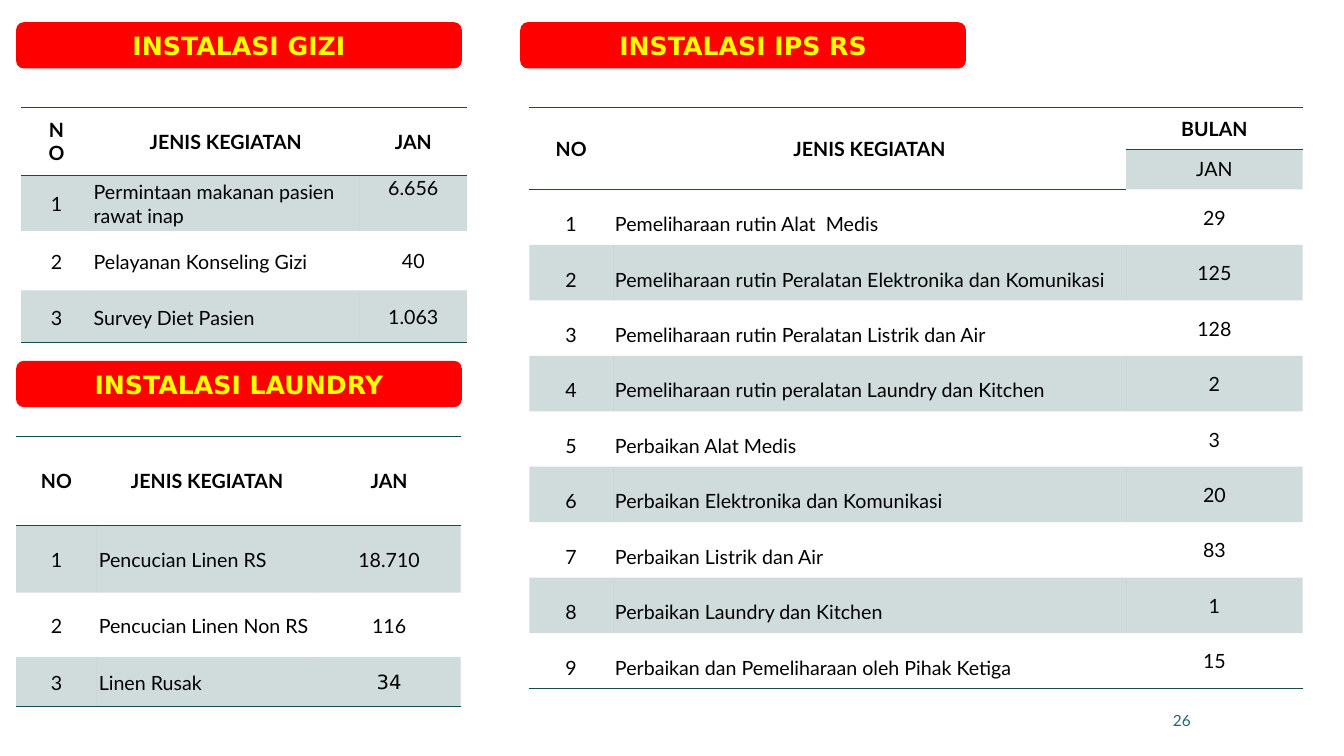
from dataclasses import dataclass
from lxml.etree import SubElement
from pptx import Presentation
from pptx.dml.color import RGBColor
from pptx.enum.shapes import MSO_SHAPE
from pptx.enum.text import MSO_ANCHOR, PP_ALIGN
from pptx.oxml.ns import qn
from pptx.util import Inches, Pt


@dataclass(frozen=True)
class Theme:
    teal: str = "164B4F"
    red: str = "FF0000"
    yellow: str = "FFFF00"
    black: str = "000000"
    page: str = "1F696F"
    font: str = "Lato"
    wide: str = "DejaVu Sans"
    head: int = 18
    body: int = 14
    small: int = 11
    tint: str = "20000"
    plain: str = "{2D5ABB26-0587-4C30-8999-92F81FD0307C}"


theme = Theme()

banners = [
    ("INSTALASI GIZI", 0.16, 0.22),
    ("INSTALASI LAUNDRY", 0.16, 3.58),
    ("INSTALASI IPS RS", 5.16, 0.22),
]

tables = [
    {
        "at": (0.21, 1.07), "cols": [0.7, 2.66, 1.06],
        "rows": [0.67, 0.55, 0.59, 0.52],
        "heads": [("NO", "JENIS KEGIATAN", "JAN")],
        "items": [
            ("Permintaan makanan pasien rawat inap", "6.656"),
            ("Pelayanan Konseling Gizi", "40"),
            ("Survey Diet Pasien", "1.063"),
        ],
        "pad": 0.08, "side": 0.01, "space": None, "odd": 1, "top": ["6.656"], "alt": [],
    },
    {
        "at": (0.16, 4.33), "cols": [0.8, 2.19, 1.42],
        "rows": [0.88, 0.67, 0.64, 0.49],
        "heads": [("NO", "JENIS KEGIATAN", "JAN")],
        "items": [
            ("Pencucian Linen RS", "18.710"),
            ("Pencucian Linen Non RS", "116"),
            ("Linen Rusak", "34"),
        ],
        "pad": 0.07, "side": 0.02, "space": None, "odd": 1, "top": [], "alt": ["34"],
    },
    {
        "at": (5.25, 1.07), "cols": [0.83, 5.09, 1.75],
        "rows": [0.41, 0.4] + [0.55] * 9,
        "heads": [("NO", "JENIS KEGIATAN", "BULAN"), ("", "", "JAN")],
        "items": [
            ("Pemeliharaan rutin Alat  Medis", "29"),
            ("Pemeliharaan rutin Peralatan Elektronika dan Komunikasi", "125"),
            ("Pemeliharaan rutin Peralatan Listrik dan Air", "128"),
            ("Pemeliharaan rutin peralatan Laundry dan Kitchen", "2"),
            ("Perbaikan Alat Medis", "3"),
            ("Perbaikan Elektronika dan Komunikasi", "20"),
            ("Perbaikan Listrik dan Air", "83"),
            ("Perbaikan Laundry dan Kitchen", "1"),
            ("Perbaikan dan Pemeliharaan oleh Pihak Ketiga", "15"),
        ],
        "pad": 0.08, "side": 0.01, "space": 1.5, "odd": 1, "top": [], "alt": [],
    },
]


def write(frame, text, size, color, font, align, bold=False, space=None):
    para = frame.paragraphs[0]
    para.alignment = align
    if space:
        para.line_spacing = space
    run = para.add_run()
    run.text = text
    run.font.size = Pt(size)
    run.font.name = font
    run.font.bold = bold
    run.font.color.rgb = RGBColor.from_string(color)


def border(cell, tag):
    line = SubElement(cell._tc.get_or_add_tcPr(), qn(tag), w=str(Pt(1)))
    fill = SubElement(line, qn("a:solidFill"))
    SubElement(fill, qn("a:srgbClr"), val=theme.teal)


def shade(cell, on):
    if not on:
        cell.fill.background()
        return
    cell.fill.solid()
    cell.fill.fore_color.rgb = RGBColor.from_string(theme.teal)
    color = cell._tc.tcPr.find(qn("a:solidFill")).find(qn("a:srgbClr"))
    SubElement(color, qn("a:alpha"), val=theme.tint)


def inset(cell, side, top, base):
    cell.margin_left = cell.margin_right = Inches(side)
    cell.margin_top = Inches(top)
    cell.margin_bottom = Inches(base)


def draw(slide, data):
    cols, rows, heads = data["cols"], data["rows"], data["heads"]
    body = [(str(n), *item) for n, item in enumerate(data["items"], 1)]
    size = map(Inches, (*data["at"], sum(cols), sum(rows)))
    table = slide.shapes.add_table(len(rows), len(cols), *size).table
    table.first_row = table.horz_banding = False
    table._tbl.tblPr.find(qn("a:tableStyleId")).text = theme.plain
    for col, width in zip(table.columns, cols):
        col.width = Inches(width)
    for row, height in zip(table.rows, rows):
        row.height = Inches(height)
    last = len(rows) - 1
    for r, texts in enumerate(heads + body):
        for c, text in enumerate(texts):
            cell = table.cell(r, c)
            head = r < len(heads)
            if r == 0:
                border(cell, "a:lnT")
            if r in (0, last) or not text:
                border(cell, "a:lnB")
            shade(cell, r % 2 == data["odd"] and text)
            if head:
                inset(cell, 0.2, data["pad"], data["pad"])
            else:
                side = data["side"] if c == 2 else 0.02
                inset(cell, side, side, 0)
            cell.vertical_anchor = MSO_ANCHOR.TOP if text in data["top"] else MSO_ANCHOR.MIDDLE
            if text:
                left = c == 1 and not head
                write(cell.text_frame, text, theme.body, theme.black,
                      theme.wide if text in data["alt"] else theme.font,
                      PP_ALIGN.LEFT if left else PP_ALIGN.CENTER, r == 0,
                      None if head or c == 2 else data["space"])
    if len(heads) > 1:
        for c in (0, 1):
            table.cell(0, c).merge(table.cell(1, c))


def banner(slide, text, left, top):
    size = map(Inches, (left, top, 4.42, 0.46))
    shape = slide.shapes.add_shape(MSO_SHAPE.ROUNDED_RECTANGLE, *size)
    shape.shadow.inherit = False
    shape.fill.solid()
    shape.fill.fore_color.rgb = RGBColor.from_string(theme.red)
    shape.line.fill.background()
    shape.text_frame.vertical_anchor = MSO_ANCHOR.MIDDLE
    write(shape.text_frame, text, theme.head, theme.yellow, theme.wide, PP_ALIGN.CENTER, True)


def main():
    deck = Presentation()
    deck.slide_width, deck.slide_height = Inches(13.33), Inches(7.5)
    slide = deck.slides.add_slide(deck.slide_layouts[6])
    for data in tables:
        draw(slide, data)
    for item in banners:
        banner(slide, *item)
    page = slide.shapes.add_textbox(*map(Inches, (8.8, 6.95, 3.11, 0.4))).text_frame
    page.word_wrap = True
    page.vertical_anchor = MSO_ANCHOR.MIDDLE
    write(page, "26", theme.small, theme.page, theme.font, PP_ALIGN.RIGHT)
    deck.save("out.pptx")


if __name__ == "__main__":
    main()
